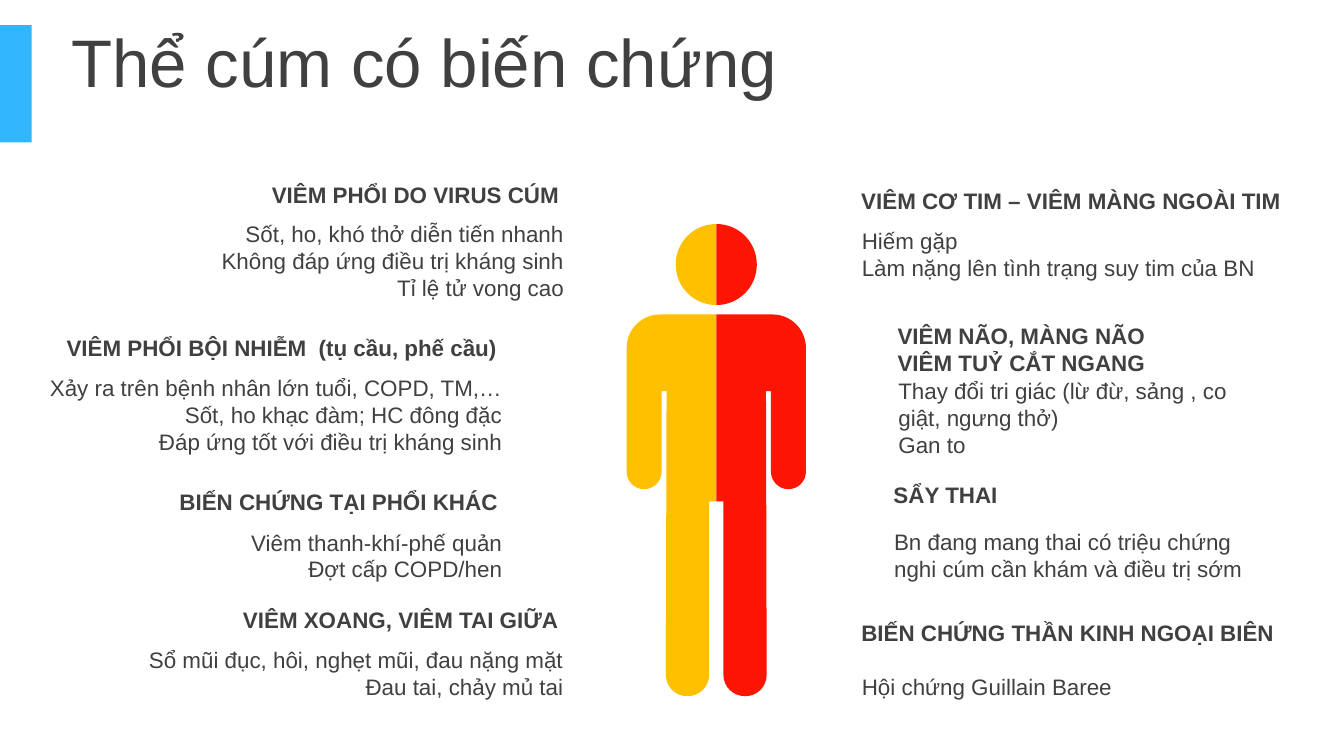
"""Build a slide on complicated influenza: a two-colour figure flanked by eight notes."""
import lxml.etree
import pptx
import pptx.dml.color
import pptx.enum.shapes
import pptx.enum.text
import pptx.oxml.ns
import pptx.util

prs = pptx.Presentation()
prs.slide_width = pptx.util.Inches(10)
prs.slide_height = pptx.util.Inches(5.625)
COL = ROW = prs.slide_width / 100
AXIS = 53.3
ALIGN = pptx.enum.text.PP_ALIGN
GREY = "404040"


def paint(target, colour):
    if hasattr(target, "solid"):
        target.solid()
        target = target.fore_color
    else:
        target = target.color
    target.rgb = pptx.dml.color.RGBColor.from_string(colour)


def write(sp, text, size, bold, align):
    tf = sp.text_frame
    tf.text = text
    tf.word_wrap = True
    tf.auto_size = pptx.enum.text.MSO_AUTO_SIZE.NONE
    tf.vertical_anchor = pptx.enum.text.MSO_ANCHOR.MIDDLE
    for p in tf.paragraphs:
        p.alignment = align
        for r in p.runs:
            r.font.name = "Arial"
            r.font.size = pptx.util.Pt(size)
            r.font.bold = bold
            paint(r.font, GREY)


s = prs.slides.add_slide(prs.slide_layouts[5])
sp = s.shapes.title
sp.left, sp.top, sp.width, sp.height = [round(v * COL) for v in (4.3, 1.35, 76.4, 6.3)]
write(sp, "Thể cúm có biến chứng", 36, False, ALIGN.LEFT)

sp = s.shapes.add_shape(pptx.enum.shapes.MSO_SHAPE.RECTANGLE,
                        0, round(1.87 * ROW), round(2.37 * COL), round(8.73 * ROW))
sp.shadow.inherit = False
paint(sp.fill, "31B6FD")
sp.line.fill.background()

body = [
    [(0, 23.4)], [(0, 37.3)], [(0.53, 37.3)], [(0.53, 50.2)],
    [(0.53, 51.1), (1.25, 51.8), (2.15, 51.8)], [(3.05, 51.8), (3.75, 51.1), (3.75, 50.2)],
    [(3.7, 29.1)], [(4.07, 29.1)], [(4.07, 35.1)],
    [(4.07, 35.8), (4.65, 36.4), (5.37, 36.4)], [(6.1, 36.4), (6.67, 35.8), (6.67, 35.1)],
    [(6.67, 25.9)], [(6.67, 24.5), (5.55, 23.4), (4.17, 23.4)],
]
head = [
    [(0, 16.67)], [(0, 22.7)],
    [(1.67, 22.7), (3.02, 21.35), (3.02, 19.7)], [(3.02, 18), (1.67, 16.67), (0, 16.67)],
]
figure = s.shapes.add_group_shape()
for side, colour in ((-1, "FFC000"), (1, "FB1502")):
    halves = [[(round((AXIS + side * x) * COL), round(y * ROW)) for step in outline for x, y in step]
              for outline in (body, head)]
    builder = figure.shapes.build_freeform(*halves[0][0])
    builder.add_line_segments(halves[0][1:], close=True)
    builder.move_to(*halves[1][0])
    builder.add_line_segments(halves[1][1:], close=True)
    sp = builder.convert_to_shape()
    lines = iter(sp._element.xpath(".//a:lnTo"))
    for step in body[1:] + head[1:]:
        nodes = [next(lines) for point in step]
        if len(nodes) == 3:
            curve = lxml.etree.Element(pptx.oxml.ns.qn("a:cubicBezTo"))
            nodes[0].addprevious(curve)
            for node in nodes:
                curve.append(node[0])
                node.getparent().remove(node)
    sp.shadow.inherit = False
    paint(sp.fill, colour)
    sp.line.fill.background()

notes = [
    (ALIGN.RIGHT, (13, 12.4, 29.6, 4.2), "VIÊM PHỔI DO VIRUS CÚM", (13.05, 16, 29.9, 6.8),
     "Sốt, ho, khó thở diễn tiến nhanh\nKhông đáp ứng điều trị kháng sinh\nTỉ lệ tử vong cao"),
    (ALIGN.RIGHT, (-0.42, 24.05, 38.4, 3.7), "VIÊM PHỔI BỘI NHIỄM  (tụ cầu, phế cầu)",
     (-0.33, 26.5, 38.7, 8.7),
     "Xảy ra trên bệnh nhân lớn tuổi, COPD, TM,…\nSốt, ho khạc đàm; HC đông đặc\n"
     "Đáp ứng tốt với điều trị kháng sinh"),
    (ALIGN.RIGHT, (8.44, 35.8, 29.6, 3), "BIẾN CHỨNG TẠI PHỔI KHÁC", (8.46, 38.84, 29.9, 5),
     "Viêm thanh-khí-phế quản\nĐợt cấp COPD/hen"),
    (ALIGN.RIGHT, (8.45, 44.6, 34.1, 3), "VIÊM XOANG, VIÊM TAI GIỮA", (8.62, 47.6, 34.3, 5),
     "Sổ mũi đục, hôi, nghẹt mũi, đau nặng mặt\nĐau tai, chảy mủ tai"),
    (ALIGN.LEFT, (63.1, 12.4, 35.4, 5), "VIÊM CƠ TIM – VIÊM MÀNG NGOÀI TIM",
     (63.14, 16.4, 35.7, 5), "Hiếm gặp\nLàm nặng lên tình trạng suy tim của BN"),
    (ALIGN.LEFT, (65.8, 22.8, 29.6, 6.3), "VIÊM NÃO, MÀNG NÃO\nVIÊM TUỶ CẮT NGANG",
     (65.86, 26.6, 29.9, 8.9),
     "Thay đổi tri giác (lừ đừ, sảng , co giật, ngưng thở)\nGan to"),
    (ALIGN.LEFT, (63.1, 44.6, 34.8, 5), "BIẾN CHỨNG THẦN KINH NGOẠI BIÊN",
     (63.14, 49.6, 35.1, 3), "Hội chứng Guillain Baree"),
    (ALIGN.LEFT, (65.5, 35.45, 29.6, 2.7), "SẨY THAI", (65.54, 38.8, 29.9, 5),
     "Bn đang mang thai có triệu chứng nghi cúm cần khám và điều trị sớm"),
]
for align, head_box, heading, text_box, text in notes:
    group = s.shapes.add_group_shape()
    for box, words, bold in ((text_box, text, False), (head_box, heading, True)):
        sp = group.shapes.add_textbox(*[round(v * COL) for v in box])
        write(sp, words, 12, bold, align)

prs.save("out.pptx")
